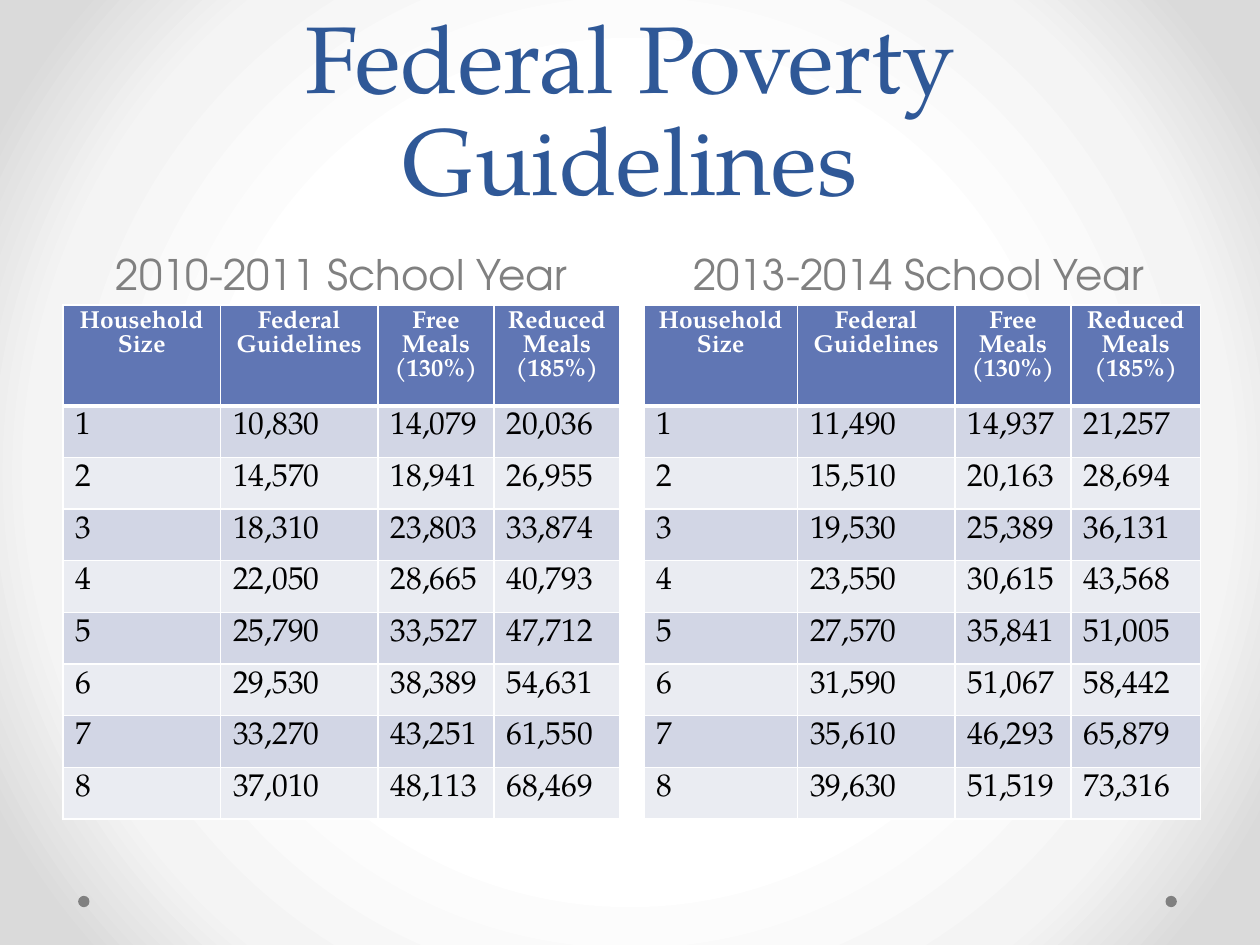
"""Build the Federal Poverty Guidelines slide with two income tables."""
import lxml.etree
import pptx
import pptx.dml.color
import pptx.enum.shapes
import pptx.enum.text
import pptx.oxml
import pptx.oxml.ns
import pptx.util

Inches, Pt = pptx.util.Inches, pptx.util.Pt
ALIGN = pptx.enum.text.PP_ALIGN
SERIF, SANS = "TeX Gyre Pagella", "TeX Gyre Adventor"
COLORS = {
    "title": "2F5897", "gray": "808080", "head": "6076B4", "odd": "D2D6E5",
    "even": "EAECF2", "white": "FFFFFF", "black": "000000",
}
GLOW = [(50, "FFFFFF"), (76, "F4F4F4"), (92, "DADADA")]
TITLE = "Federal Poverty Guidelines"
HEADS = ["Household Size", "Federal Guidelines", "Free Meals (130%)", "Reduced Meals (185%)"]
YEARS = [
    {
        "name": "2010-2011 School Year", "text_x": 0.5, "table_x": 0.5,
        "cols": [1.25, 1.25, 0.92, 1],
        "rows": [
            ("10,830", "14,079", "20,036"), ("14,570", "18,941", "26,955"),
            ("18,310", "23,803", "33,874"), ("22,050", "28,665", "40,793"),
            ("25,790", "33,527", "47,712"), ("29,530", "38,389", "54,631"),
            ("33,270", "43,251", "61,550"), ("37,010", "48,113", "68,469"),
        ],
    },
    {
        "name": "2013-2014 School Year", "text_x": 5.08, "table_x": 5.11,
        "cols": [1.22, 1.25, 0.92, 1.03],
        "rows": [
            ("11,490", "14,937", "21,257"), ("15,510", "20,163", "28,694"),
            ("19,530", "25,389", "36,131"), ("23,550", "30,615", "43,568"),
            ("27,570", "35,841", "51,005"), ("31,590", "51,067", "58,442"),
            ("35,610", "46,293", "65,879"), ("39,630", "51,519", "73,316"),
        ],
    },
]
DOTS = [9.25, 0.62]
WIDTH, TOP, HEIGHT, ROW = 4.42, 2.42, 4.04, 0.41


def rgb(name):
    return pptx.dml.color.RGBColor.from_string(COLORS[name])


def write(frame, text, face, size, color, align, bold=False):
    frame.text = text
    para = frame.paragraphs[0]
    para.alignment = align
    font = para.runs[0].font
    font.name, font.size, font.bold = face, Pt(size), bold
    font.color.rgb = rgb(color)
    return para


def add_text(slide, box, text, face, size, color):
    frame = slide.shapes.add_textbox(*map(Inches, box)).text_frame
    frame.word_wrap = True
    frame.vertical_anchor = pptx.enum.text.MSO_ANCHOR.BOTTOM
    return write(frame, text, face, size, color, ALIGN.CENTER)


def add_glow(slide):
    stops = "".join(
        f'<a:gs pos="{at * 1000}"><a:srgbClr val="{color}"/></a:gs>' for at, color in GLOW
    )
    back = pptx.oxml.parse_xml(
        f'<p:bg {pptx.oxml.ns.nsdecls("p", "a")}><p:bgPr><a:gradFill rotWithShape="1">'
        f'<a:gsLst>{stops}</a:gsLst><a:path path="circle">'
        '<a:fillToRect l="50000" t="50000" r="50000" b="50000"/></a:path>'
        '</a:gradFill><a:effectLst/></p:bgPr></p:bg>'
    )
    slide.element.cSld.insert(0, back)


def add_lines(cell, row):
    props = cell._tc.get_or_add_tcPr()
    wide = {"T": 3 if row == 1 else 1, "B": 3 if row == 0 else 1}
    for side in "LRTB":
        line = lxml.etree.SubElement(
            props, pptx.oxml.ns.qn(f"a:ln{side}"), w=str(Pt(wide.get(side, 1)))
        )
        fill = lxml.etree.SubElement(line, pptx.oxml.ns.qn("a:solidFill"))
        lxml.etree.SubElement(fill, pptx.oxml.ns.qn("a:srgbClr"), val=COLORS["white"])


def add_year(slide, year):
    para = add_text(slide, (year["text_x"], 1.75, WIDTH, 0.67), year["name"], SANS, 24, "gray")
    para.space_before = Pt(4.8)
    data = [HEADS] + [(str(size), *sums) for size, sums in enumerate(year["rows"], 1)]
    box = map(Inches, (year["table_x"], TOP, WIDTH, HEIGHT))
    holder = slide.shapes.add_table(len(data), len(HEADS), *box)
    table = holder.table
    for col, wide in zip(table.columns, year["cols"]):
        col.width = Inches(wide)
    for row, texts in enumerate(data):
        table.rows[row].height = Inches(ROW)
        for col, text in enumerate(texts):
            cell = table.cell(row, col)
            add_lines(cell, row)
            cell.fill.solid()
            if row == 0:
                cell.fill.fore_color.rgb = rgb("head")
                write(cell.text_frame, text, SERIF, 14, "white", ALIGN.CENTER, True)
            else:
                cell.fill.fore_color.rgb = rgb("odd" if row % 2 else "even")
                write(cell.text_frame, text, SERIF, 18, "black", ALIGN.LEFT)
    holder.height = Inches(HEIGHT)


def add_dot(slide, left):
    box = map(Inches, (left, 7.11, 0.09, 0.09))
    dot = slide.shapes.add_shape(pptx.enum.shapes.MSO_SHAPE.OVAL, *box)
    dot.shadow.inherit = False
    dot.fill.solid()
    dot.fill.fore_color.rgb = rgb("gray")
    dot.line.fill.background()


def main():
    deck = pptx.Presentation()
    deck.slide_width, deck.slide_height = Inches(10), Inches(7.5)
    slide = deck.slides.add_slide(deck.slide_layouts[6])
    add_glow(slide)
    for left in DOTS:
        add_dot(slide, left)
    title = add_text(slide, (0.5, 0, 9, 1.75), TITLE, SERIF, 54, "title")
    title.line_spacing = Pt(58)
    for year in YEARS:
        add_year(slide, year)
    deck.save("out.pptx")


if __name__ == "__main__":
    main()
